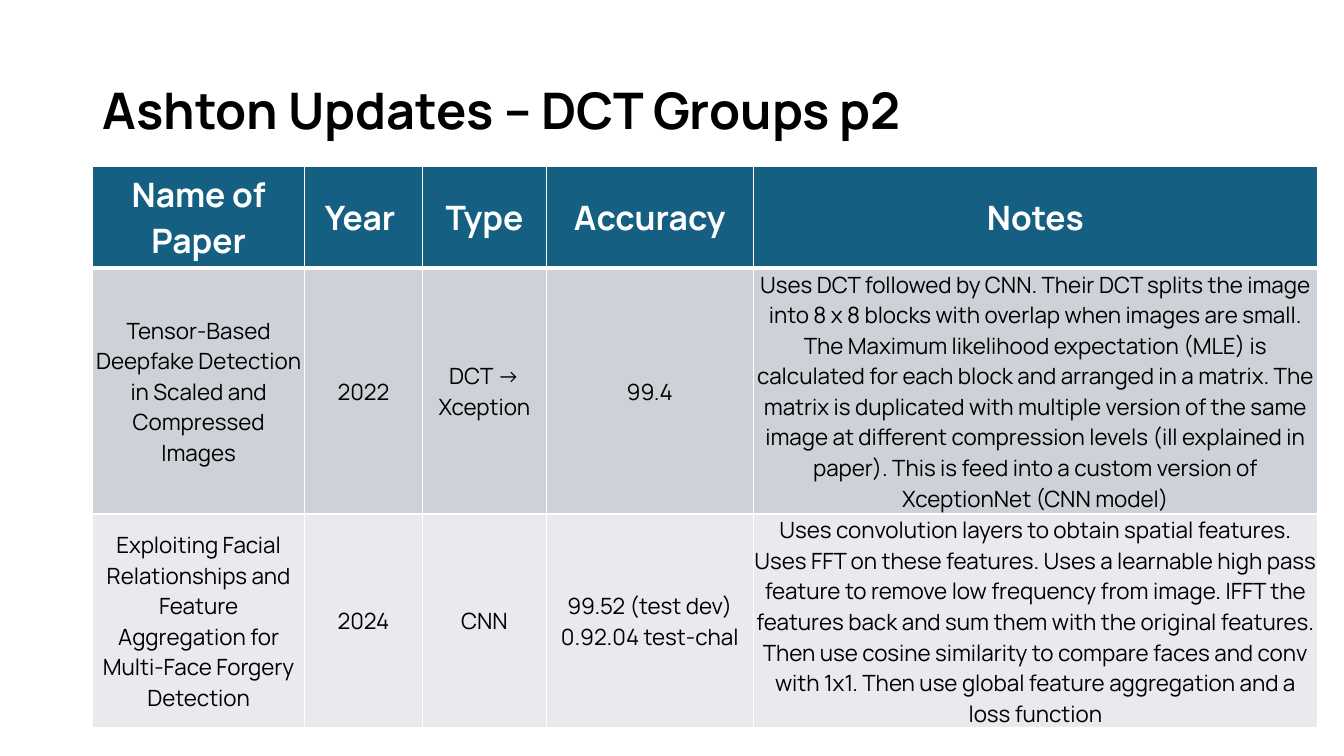
from dataclasses import dataclass

from lxml import etree
from pptx import Presentation, util as u
from pptx.dml.color import RGBColor
from pptx.enum import text as t
from pptx.oxml import ns


@dataclass(frozen=True)
class Theme:
    """Colours, font and type sizes of the slide."""
    font: str = "Manrope"
    ink: str = "000000"
    paper: str = "FFFFFF"
    head: str = "156082"
    bands: tuple = ("CCD2D8", "E8EAED")
    title: int = 36
    label: int = 24
    body: int = 16
    thin: int = 1
    thick: int = 3


THEME = Theme()
WIDE, HIGH = 13.33, 7.5
LEFT = 0.92
COLS = (2.1, 1.17, 1.23, 2.05, 5.6)
TALL = (1.01, 2.44, 2.12)
ROWS = (
    ("Name of Paper", "Year ", "Type", "Accuracy", "Notes"),
    ("Tensor-Based Deepfake Detection in Scaled and Compressed Images",
     "2022", "DCT -> Xception", "99.4",
     "Uses DCT followed by CNN. Their DCT splits the image into 8 x 8 blocks "
     "with overlap when images are small. The Maximum likelihood expectation "
     "(MLE) is calculated for each block and arranged in a matrix. The matrix "
     "is duplicated with multiple version of the same image at different "
     "compression levels (ill explained in paper). This is feed into a custom "
     "version of XceptionNet (CNN model)"),
    ("Exploiting Facial Relationships and Feature Aggregation for "
     "Multi-Face Forgery Detection",
     "2024", "CNN", "99.52 (test dev) 0.92.04 test-chal",
     "Uses convolution layers to obtain spatial features. Uses FFT on these "
     "features. Uses a learnable high pass feature to remove low frequency "
     "from image. IFFT the features back and sum them with the original "
     "features. Then use cosine similarity to compare faces and conv with "
     "1x1. Then use global feature aggregation and a loss function"),
)


def write(para, words, size, color, bold):
    """Add one styled run to a paragraph."""
    run = para.add_run()
    run.text = words
    font = run.font
    font.name, font.size, font.bold = THEME.font, u.Pt(size), bold
    font.color.rgb = RGBColor.from_string(color)


def edge(cell, top, base):
    """Draw the four borders of a cell, ahead of its fill."""
    props = cell._tc.get_or_add_tcPr()
    sides = (("L", THEME.thin), ("R", THEME.thin), ("T", top), ("B", base))
    for spot, (side, width) in enumerate(sides):
        line = etree.Element(ns.qn(f"a:ln{side}"), w=str(u.Pt(width)))
        fill = etree.SubElement(line, ns.qn("a:solidFill"))
        etree.SubElement(fill, ns.qn("a:srgbClr"), val=THEME.paper)
        props.insert(spot, line)


def title(slide, box, words):
    """Place the heading in the middle of its box."""
    frame = slide.shapes.add_textbox(*map(u.Inches, box)).text_frame
    frame.word_wrap = True
    frame.vertical_anchor = t.MSO_ANCHOR.MIDDLE
    para = frame.paragraphs[0]
    para.line_spacing = 0.9
    write(para, words, THEME.title, THEME.ink, True)


def papers(slide, box):
    """Build the table of papers in its box."""
    table = slide.shapes.add_table(
        len(ROWS), len(COLS), *map(u.Inches, box)).table
    for col, width in zip(table.columns, COLS):
        col.width = u.Inches(width)
    for r, row in enumerate(ROWS):
        table.rows[r].height = u.Inches(TALL[r])
        head = r == 0
        back = THEME.head if head else THEME.bands[r - 1]
        size = THEME.label if head else THEME.body
        ink = THEME.paper if head else THEME.ink
        top = THEME.thick if r == 1 else THEME.thin
        base = THEME.thick if head else THEME.thin
        for c, words in enumerate(row):
            cell = table.cell(r, c)
            cell.fill.solid()
            cell.fill.fore_color.rgb = RGBColor.from_string(back)
            edge(cell, top, base)
            cell.vertical_anchor = t.MSO_ANCHOR.MIDDLE
            cell.margin_left = cell.margin_right = u.Inches(0.01)
            cell.margin_top, cell.margin_bottom = u.Inches(0.01), 0
            para = cell.text_frame.paragraphs[0]
            para.alignment = t.PP_ALIGN.CENTER
            write(para, words, size, ink, head)


def main():
    """Build and save the slide."""
    deck = Presentation()
    deck.slide_width, deck.slide_height = u.Inches(WIDE), u.Inches(HIGH)
    slide = deck.slides.add_slide(deck.slide_layouts[6])
    title(slide, (LEFT, 0.4, 11.5, 1.45), "Ashton Updates – DCT Groups p2")
    papers(slide, (LEFT, 1.65, sum(COLS), sum(TALL)))
    deck.save("out.pptx")


if __name__ == "__main__":
    main()
